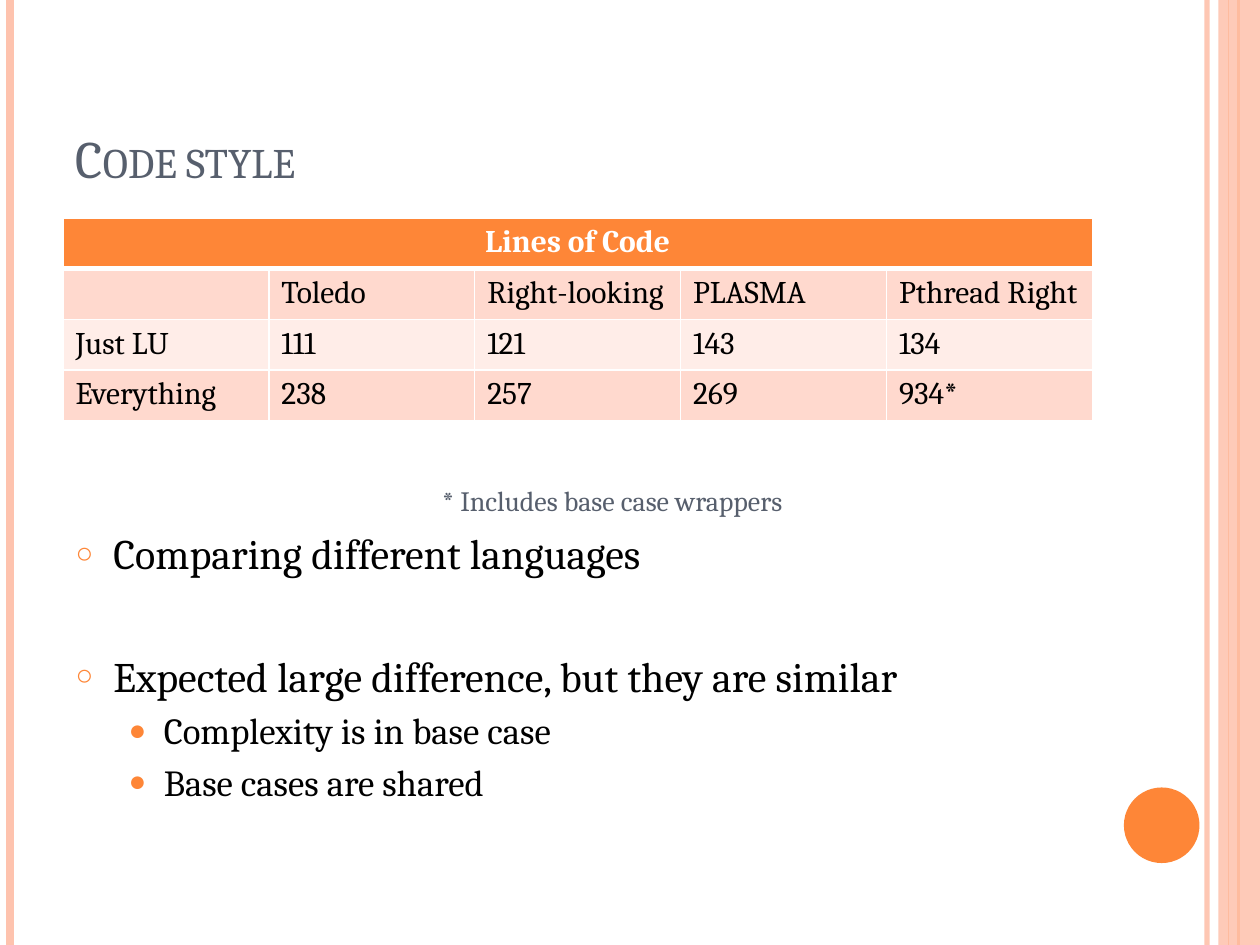
import pptx
import pptx.dml.color
import pptx.enum.shapes
import pptx.enum.text
import pptx.oxml
import pptx.oxml.ns
import pptx.util
from lxml import etree

Inches, Pt = pptx.util.Inches, pptx.util.Pt
qn = pptx.oxml.ns.qn
ANCHOR = pptx.enum.text.MSO_ANCHOR
LEFT, CENTER = pptx.enum.text.PP_ALIGN.LEFT, pptx.enum.text.PP_ALIGN.CENTER
SHAPE = pptx.enum.shapes.MSO_SHAPE

FONT = "Cambria"
COLORS = {"accent": "FE8637", "pale": "FEC3AE", "slate": "575F6D",
          "black": "000000", "white": "FFFFFF",
          "band dark": "FFD9CE", "band light": "FFEDE8"}

TITLE = "Code style"
TABLE_TITLE = "Lines of Code"
LINE_COUNTS = [
    ["", "Toledo", "Right-looking", "PLASMA", "Pthread Right"],
    ["Just LU", "111", "121", "143", "134"],
    ["Everything", "238", "257", "269", "934*"],
]
FOOTNOTE = {"size": 16, "color": "slate", "indent": (2.91, 0), "before": 0}
POINT = {"size": 24, "color": "black", "indent": (0.3, -0.3), "before": 6,
         "bullet": ("○", 70)}
SUBPOINT = {"size": 21, "color": "black", "indent": (0.7, -0.28), "before": 4.2,
            "bullet": ("●", 80), "level": 1}
BODY = [
    ("* Includes base case wrappers", FOOTNOTE),
    ("Comparing different languages", POINT),
    ("Expected large difference, but they are similar", {**POINT, "before": 41}),
    ("Complexity is in base case", SUBPOINT),
    ("Base cases are shared", SUBPOINT),
]
# x, colour, width in points, opacity in percent
SIDE_LINES = [(9.58, "pale", 3, 93), (0.08, "pale", 4.5, 100),
              (9.83, "accent", 1.5, 100), (9.75, "accent", 0.75, 100)]

WIDTH, HEIGHT = 10, 7.5
MARGIN, CONTENT_WIDTH = 0.5, 8.17
TABLE_TOP, ROW_HEIGHT = 1.73, 0.4
BODY_TOP, BODY_INSET = 1.75, 2.09


def rgb(name):
    return pptx.dml.color.RGBColor.from_string(COLORS[name])


def paint(fill, name, opacity=100):
    fill.solid()
    fill.fore_color.rgb = rgb(name)
    if opacity < 100:
        color = fill._xPr.find(".//" + qn("a:srgbClr"))
        etree.SubElement(color, qn("a:alpha"), val=str(opacity * 1000))


def write(paragraph, text, size, color, bold=False):
    run = paragraph.add_run()
    run.text = text
    formats = {"name": FONT, "size": Pt(size), "bold": bold}
    for attribute, value in formats.items():
        setattr(run.font, attribute, value)
    run.font.color.rgb = rgb(color)
    return run


def set_bullet(paragraph, bullet):
    properties = paragraph._p.get_or_add_pPr()
    if bullet is None:
        etree.SubElement(properties, qn("a:buNone"))
        return
    symbol, percent = bullet
    color = etree.SubElement(properties, qn("a:buClr"))
    etree.SubElement(color, qn("a:srgbClr"), val=COLORS["accent"])
    etree.SubElement(properties, qn("a:buSzPct"), val=str(percent * 1000))
    etree.SubElement(properties, qn("a:buChar"), char=symbol)


def set_borders(cell, bottom=1):
    properties = cell._tc.get_or_add_tcPr()
    widths = {"a:lnL": 1, "a:lnR": 1, "a:lnT": 1, "a:lnB": bottom}
    for place, (tag, width) in enumerate(widths.items()):
        border = etree.Element(qn(tag), w=str(Pt(width)))
        fill = etree.SubElement(border, qn("a:solidFill"))
        etree.SubElement(fill, qn("a:srgbClr"), val=COLORS["white"])
        properties.insert(place, border)


def place_frame(placeholder, top, height, anchor):
    box = {"left": MARGIN, "top": top, "width": CONTENT_WIDTH, "height": height}
    for side, length in box.items():
        setattr(placeholder, side, Inches(length))
    frame = placeholder.text_frame
    frame.word_wrap = True
    frame.auto_size = pptx.enum.text.MSO_AUTO_SIZE.NONE
    frame.vertical_anchor = anchor
    return frame


def add_side_decoration(shapes):
    for x, color, width, opacity in SIDE_LINES:
        line = shapes.add_connector(pptx.enum.shapes.MSO_CONNECTOR.STRAIGHT,
                                    Inches(x), 0, Inches(x), Inches(HEIGHT))
        line.line.width = Pt(width)
        paint(line.line.fill, color, opacity)
        etree.SubElement(line._element.spPr, qn("a:effectLst"))
    for kind, box, color, opacity in [
        (SHAPE.RECTANGLE, (9.67, 0, WIDTH - 9.67, HEIGHT), "pale", 87),
        (SHAPE.OVAL, (8.92, 6.25, 0.6, 0.6), "accent", 100),
    ]:
        shape = shapes.add_shape(kind, *map(Inches, box))
        shape.shadow.inherit = False
        shape.line.fill.background()
        paint(shape.fill, color, opacity)


def add_title(placeholder):
    heading = place_frame(placeholder, 0.3, 1.25, ANCHOR.BOTTOM).paragraphs[0]
    heading.alignment = LEFT
    run = write(heading, TITLE, 30, "slate")
    run.font._element.set("cap", "small")


def add_body(placeholder):
    frame = place_frame(placeholder, BODY_TOP, 5.33, ANCHOR.TOP)
    frame.margin_top = Inches(BODY_INSET)
    for number, (text, style) in enumerate(BODY):
        paragraph = frame.add_paragraph() if number else frame.paragraphs[0]
        paragraph.level = style.get("level", 0)
        paragraph.alignment = LEFT
        paragraph.space_before = Pt(style["before"])
        margin, indent = style["indent"]
        properties = paragraph._p.get_or_add_pPr()
        properties.set("marL", str(Inches(margin)))
        properties.set("indent", str(Inches(indent)))
        set_bullet(paragraph, style.get("bullet"))
        write(paragraph, text, style["size"], style["color"])


def add_line_counts(shapes):
    columns, rows = len(LINE_COUNTS[0]), len(LINE_COUNTS) + 1
    table = shapes.add_table(rows, columns, Inches(MARGIN), Inches(TABLE_TOP),
                             Inches(CONTENT_WIDTH),
                             Inches(rows * ROW_HEIGHT)).table
    header = table.cell(0, 0)
    header.merge(table.cell(0, columns - 1))
    for column in range(columns):
        paint(table.cell(0, column).fill, "accent")
        set_borders(table.cell(0, column), bottom=3)
    heading = header.text_frame.paragraphs[0]
    heading.alignment = CENTER
    write(heading, TABLE_TITLE, 18, "white", bold=True)
    for row, values in enumerate(LINE_COUNTS, start=1):
        for column, value in enumerate(values):
            cell = table.cell(row, column)
            paint(cell.fill, "band dark" if row % 2 else "band light")
            set_borders(cell)
            if value:
                write(cell.text_frame.paragraphs[0], value, 18, "black")


def main():
    deck = pptx.Presentation()
    deck.slide_width, deck.slide_height = Inches(WIDTH), Inches(HEIGHT)
    slide = deck.slides.add_slide(deck.slide_layouts[1])
    paint(slide.background.fill, "white")
    add_side_decoration(slide.shapes)
    add_title(slide.shapes.title)
    add_body(slide.placeholders[1])
    add_line_counts(slide.shapes)
    deck.save("out.pptx")


if __name__ == "__main__":
    main()
